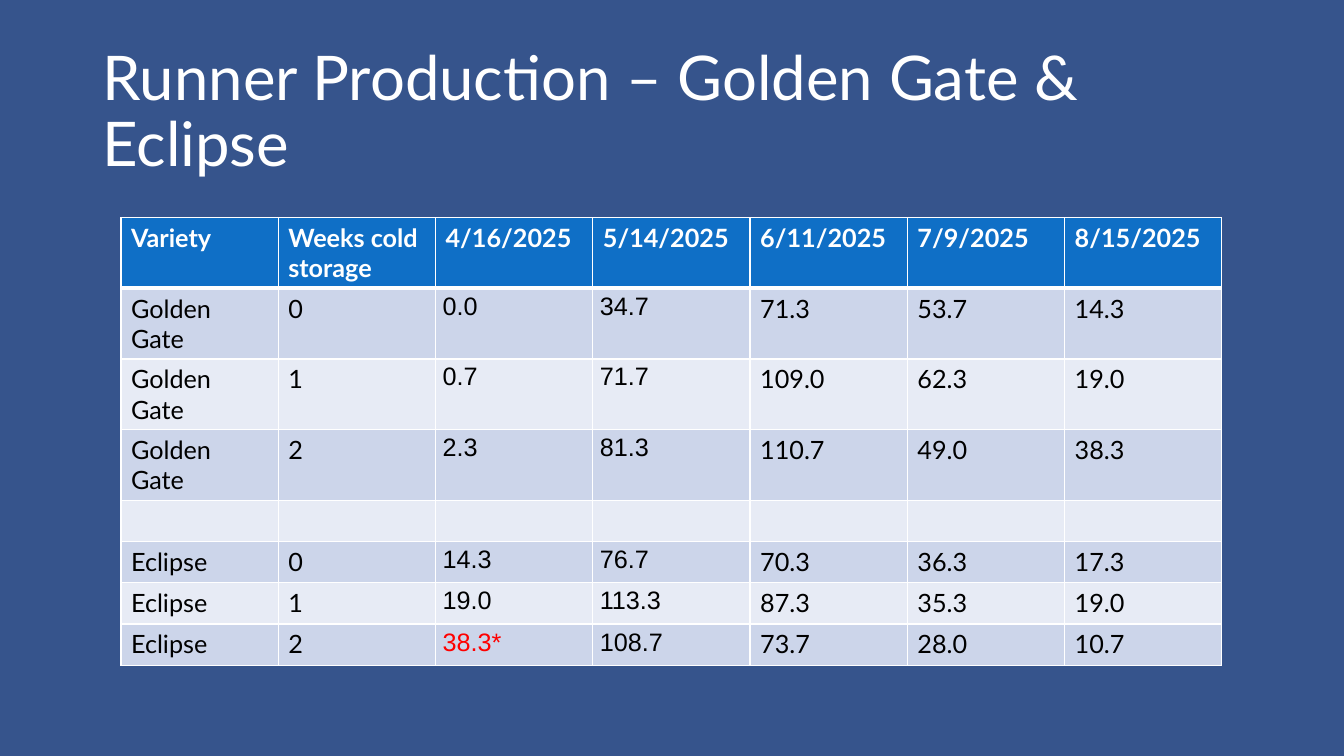
from dataclasses import dataclass

from lxml import etree
from pptx import Presentation
from pptx import util as u
from pptx.dml.color import RGBColor
from pptx.enum import text
from pptx.oxml import ns

COLORS = {
    "background": "36548C",
    "header": "0F6FC6",
    "odd row": "CCD5EA",
    "even row": "E7EBF5",
    "white": "FFFFFF",
    "black": "000000",
    "highlight": "FF0000",
}
HEADINGS = ("Variety", "Weeks cold storage", "4/16/2025", "5/14/2025",
            "6/11/2025", "7/9/2025", "8/15/2025")
COLUMN_WIDTH = u.Inches(1.56)
ROW_HEIGHT = u.Inches(0.41)
ARIAL_COLUMNS = (2, 3)


@dataclass(frozen=True)
class Trial:
    variety: str
    weeks: int
    runners: tuple[str, ...]


TRIALS = (
    Trial("Golden Gate", 0, ("0.0", "34.7", "71.3", "53.7", "14.3")),
    Trial("Golden Gate", 1, ("0.7", "71.7", "109.0", "62.3", "19.0")),
    Trial("Golden Gate", 2, ("2.3", "81.3", "110.7", "49.0", "38.3")),
    None,
    Trial("Eclipse", 0, ("14.3", "76.7", "70.3", "36.3", "17.3")),
    Trial("Eclipse", 1, ("19.0", "113.3", "87.3", "35.3", "19.0")),
    Trial("Eclipse", 2, ("38.3*", "108.7", "73.7", "28.0", "10.7")),
)


def rgb(name: str) -> RGBColor:
    return RGBColor.from_string(COLORS[name])


def write(frame, words: str, *, size: float = 18, font: str = "Lato",
          color: str = "black", bold: bool = False,
          line_spacing: float | None = None) -> None:
    paragraph = frame.paragraphs[0]
    paragraph.line_spacing = line_spacing
    run = paragraph.add_run()
    run.text = words
    run.font.size = u.Pt(size)
    run.font.name = font
    run.font.bold = bold
    run.font.color.rgb = rgb(color)


def add_borders(cell, top: float = 1, bottom: float = 1) -> None:
    """Draw white cell borders; call before the fill to keep the XML order."""
    properties = cell._tc.get_or_add_tcPr()
    for side, points in (("L", 1), ("R", 1), ("T", top), ("B", bottom)):
        line = etree.SubElement(properties, ns.qn(f"a:ln{side}"), w=str(u.Pt(points)))
        fill = etree.SubElement(line, ns.qn("a:solidFill"))
        etree.SubElement(fill, ns.qn("a:srgbClr"), val=COLORS["white"])


def fill_cell(cell, color: str) -> None:
    cell.fill.solid()
    cell.fill.fore_color.rgb = rgb(color)


def add_title(slide) -> None:
    box = slide.shapes.add_textbox(u.Inches(0.92), u.Inches(0.4),
                                   u.Inches(11.5), u.Inches(1.45))
    frame = box.text_frame
    frame.word_wrap = True
    frame.vertical_anchor = text.MSO_ANCHOR.MIDDLE
    write(frame, "Runner Production – Golden Gate & Eclipse",
          size=44, color="white", line_spacing=0.9)


def write_value(cell, column: int, value: str) -> None:
    if column not in ARIAL_COLUMNS:
        write(cell.text_frame, value)
        return
    cell.margin_left = cell.margin_right = u.Inches(0.07)
    cell.margin_top = cell.margin_bottom = 0
    write(cell.text_frame, value, font="Arial", line_spacing=1.15,
          color="highlight" if value.endswith("*") else "black")


def add_runner_table(slide) -> None:
    row_count, column_count = len(TRIALS) + 1, len(HEADINGS)
    table = slide.shapes.add_table(
        row_count, column_count, u.Inches(1.2), u.Inches(2.16),
        COLUMN_WIDTH * column_count, ROW_HEIGHT * row_count).table
    for column, heading in enumerate(HEADINGS):
        cell = table.cell(0, column)
        add_borders(cell, bottom=3)
        fill_cell(cell, "header")
        write(cell.text_frame, heading, color="white", bold=True)
    for row, trial in enumerate(TRIALS, start=1):
        values = (trial.variety, str(trial.weeks), *trial.runners) if trial else ()
        for column in range(column_count):
            cell = table.cell(row, column)
            add_borders(cell, top=3 if row == 1 else 1)
            fill_cell(cell, "odd row" if row % 2 else "even row")
            if values:
                write_value(cell, column, values[column])


def main() -> None:
    presentation = Presentation()
    presentation.slide_width = u.Inches(13.33)
    presentation.slide_height = u.Inches(7.5)
    slide = presentation.slides.add_slide(presentation.slide_layouts[6])
    slide.background.fill.solid()
    slide.background.fill.fore_color.rgb = rgb("background")
    add_title(slide)
    add_runner_table(slide)
    presentation.save("out.pptx")


if __name__ == "__main__":
    main()
